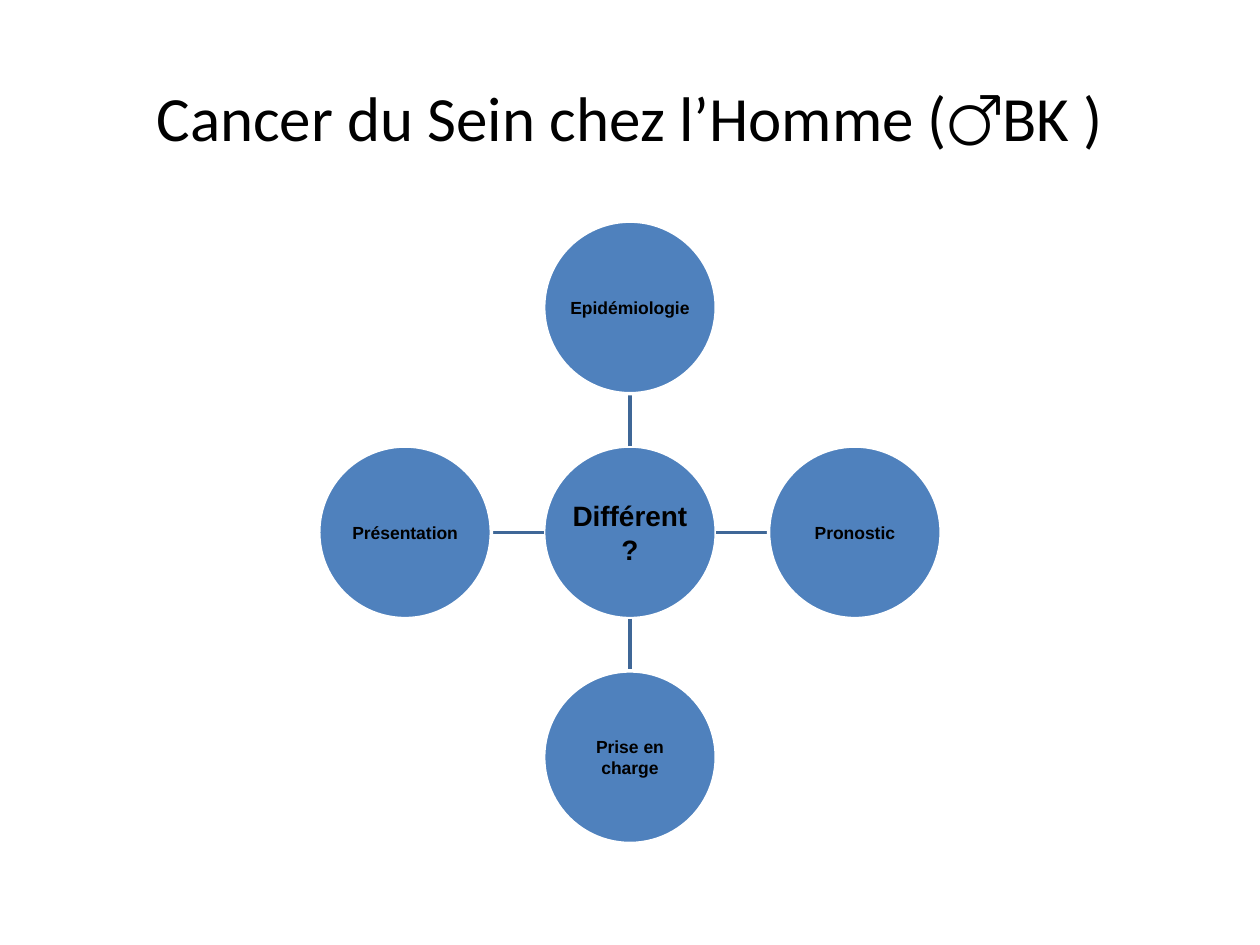
"""Build a slide with a central question linked to four topics around it."""
from pptx import Presentation
from pptx import util as u
from pptx.dml.color import RGBColor
from pptx.enum import shapes, text
from pptx.oxml.ns import qn


def tint(hue):
    return RGBColor.from_string(hue)


def write(shape, words, pad, **style):
    frame = shape.text_frame
    form = dict(word_wrap=True, vertical_anchor=text.MSO_ANCHOR.MIDDLE,
                margin_left=pad, margin_right=pad, margin_top=pad, margin_bottom=pad)
    for key, value in form.items():
        setattr(frame, key, value)
    para = frame.paragraphs[0]
    para.alignment = text.PP_ALIGN.CENTER
    run = para.add_run()
    run.text = words
    for key, value in style.items():
        setattr(run.font, key, value)
    run.font.color.rgb = tint("000000")


deck = Presentation()
deck.slide_width, deck.slide_height = u.Inches(10), u.Inches(7.5)
slide = deck.slides.add_slide(deck.slide_layouts[6])
wide, high = deck.slide_width, deck.slide_height

title = slide.shapes.add_textbox(*map(int, (wide * 0.05, high * 0.04, wide * 0.9, high / 6)))
write(title, "Cancer du Sein chez l’Homme (♂BK )", u.Inches(0.1),
      name="Calibri", size=u.Pt(36), bold=False)

size, step = u.Inches(1.37), u.Inches(1.785)
half = size / 2
mid, row = wide / 2, u.Inches(4.225)
topics = [
    ("Différent ?", 16, 0, 0),
    ("Epidémiologie", 10, 0, -1),
    ("Pronostic", 10, 1, 0),
    ("Prise en charge", 10, 0, 1),
    ("Présentation", 10, -1, 0),
]

wheel = slide.shapes.add_group_shape().shapes
for words, points, right, down in topics:
    if right or down:
        ends = [int(base + way * reach) for reach in (half, step - half)
                for base, way in ((mid, right), (row, down))]
        link = wheel.add_connector(shapes.MSO_CONNECTOR.STRAIGHT, *ends)
        link.line.color.rgb = tint("3F6797")
        link.line.width = u.Pt(2)
        link._element.spPr.append(link._element.makeelement(qn("a:effectLst"), {}))
    left, top = mid + right * step - half, row + down * step - half
    disc = wheel.add_shape(shapes.MSO_SHAPE.OVAL, int(left), int(top), size, size)
    disc.shadow.inherit = False
    disc.fill.solid()
    disc.fill.fore_color.rgb = tint("4F81BD")
    disc.line.color.rgb = tint("FFFFFF")
    disc.line.width = u.Pt(2)
    write(disc, words, u.Inches(0.01), name="Arial", size=u.Pt(points), bold=True)

deck.save("out.pptx")
